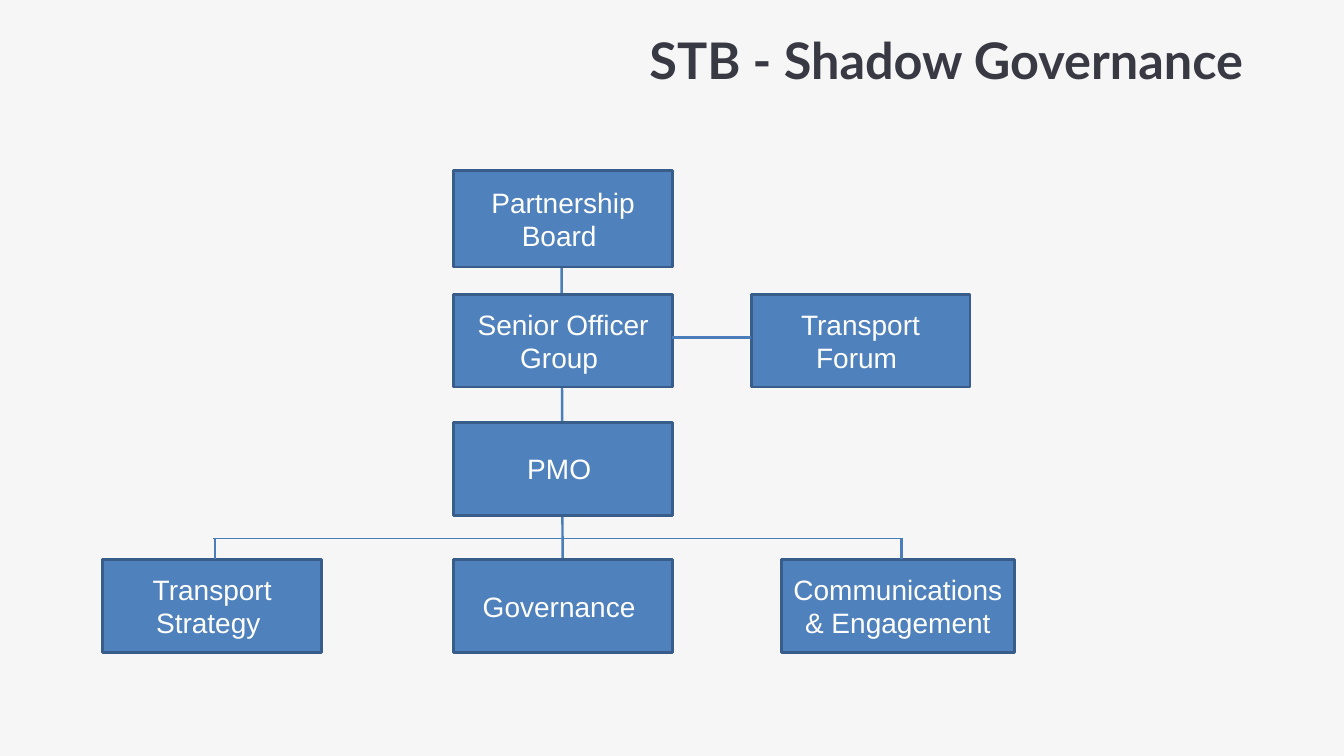
from dataclasses import dataclass

from lxml.etree import SubElement
from pptx import Presentation
from pptx.dml.color import RGBColor as Rgb
from pptx.enum.shapes import MSO_CONNECTOR as Link, MSO_SHAPE as Shape
from pptx.enum.text import MSO_ANCHOR as Anchor, PP_ALIGN as Align
from pptx.oxml.ns import qn
from pptx.util import Pt

PX = 9144


@dataclass(frozen=True)
class Theme:
    back: str = "F6F6F6"
    ink: str = "393944"
    box: str = "4F81BD"
    edge: str = "385D8A"
    wire: str = "4A7EBB"
    pale: str = "FFFFFF"
    head: int = 36
    body: int = 20
    thick: float = 1.75
    thin: float = 0.75
    rim: float = 2


LOOK = Theme()


def color(code):
    """Turn a hex code into a colour."""
    return Rgb.from_string(code)


def scale(*sizes):
    """Turn px lengths into EMU."""
    return [size * PX for size in sizes]


def write(shape, text, font="Arial", size=LOOK.body, ink=LOOK.pale,
          bold=False, align=Align.CENTER, space=None, right=10):
    """Put formatted text into a shape."""
    frame = shape.text_frame
    frame.word_wrap = True
    frame.vertical_anchor = Anchor.MIDDLE
    frame.margin_right = right * PX
    para = frame.paragraphs[0]
    para.alignment = align
    para.line_spacing = space
    run = para.add_run()
    run.text = text
    run.font.name = font
    run.font.size = Pt(size)
    run.font.bold = bold
    run.font.color.rgb = color(ink)


def title(slide, text):
    """Add the slide heading."""
    frame = slide.shapes.add_textbox(*scale(558, 0, 710, 125))
    write(frame, text, font="Lato", size=LOOK.head, ink=LOOK.ink,
          bold=True, align=Align.RIGHT, space=0.9, right=35)


def box(slide, text, left, top, wide=217, high=92):
    """Add one box of the chart."""
    shape = slide.shapes.add_shape(
        Shape.FLOWCHART_PROCESS, *scale(left, top, wide, high))
    shape.shadow.inherit = False
    shape.fill.solid()
    shape.fill.fore_color.rgb = color(LOOK.box)
    shape.line.color.rgb = color(LOOK.edge)
    shape.line.width = Pt(LOOK.rim)
    write(shape, text)


def wire(slide, *ends, width=LOOK.thick):
    """Add one straight line between two points."""
    line = slide.shapes.add_connector(Link.STRAIGHT, *scale(*ends))
    line.line.color.rgb = color(LOOK.wire)
    line.line.width = Pt(width)
    SubElement(line._element.spPr, qn("a:effectLst"))


def main():
    """Build and save the slide."""
    deck = Presentation()
    deck.slide_width, deck.slide_height = scale(1333, 750)
    slide = deck.slides.add_slide(deck.slide_layouts[6])
    slide.background.fill.solid()
    slide.background.fill.fore_color.rgb = color(LOOK.back)

    mid, row, rail, base = 450, 292, 534, 555
    title(slide, "STB - Shadow Governance")
    wire(slide, 557, 256, 558, base)
    box(slide, "Partnership Board ", mid, 169, high=96)
    box(slide, "Senior Officer Group ", mid, row)
    box(slide, "Transport Forum ", 745, row)
    box(slide, "PMO ", mid, 419)
    box(slide, "Communications & Engagement", 775, base, wide=231)
    box(slide, "Governance ", mid, base)
    box(slide, "Transport Strategy ", 102, base)

    wire(slide, 667, 335, 745, 335)
    wire(slide, 211, rail, 893, rail, width=LOOK.thin)
    for x in (213, 894):
        wire(slide, x, rail, x, base)
    deck.save("out.pptx")


if __name__ == "__main__":
    main()
